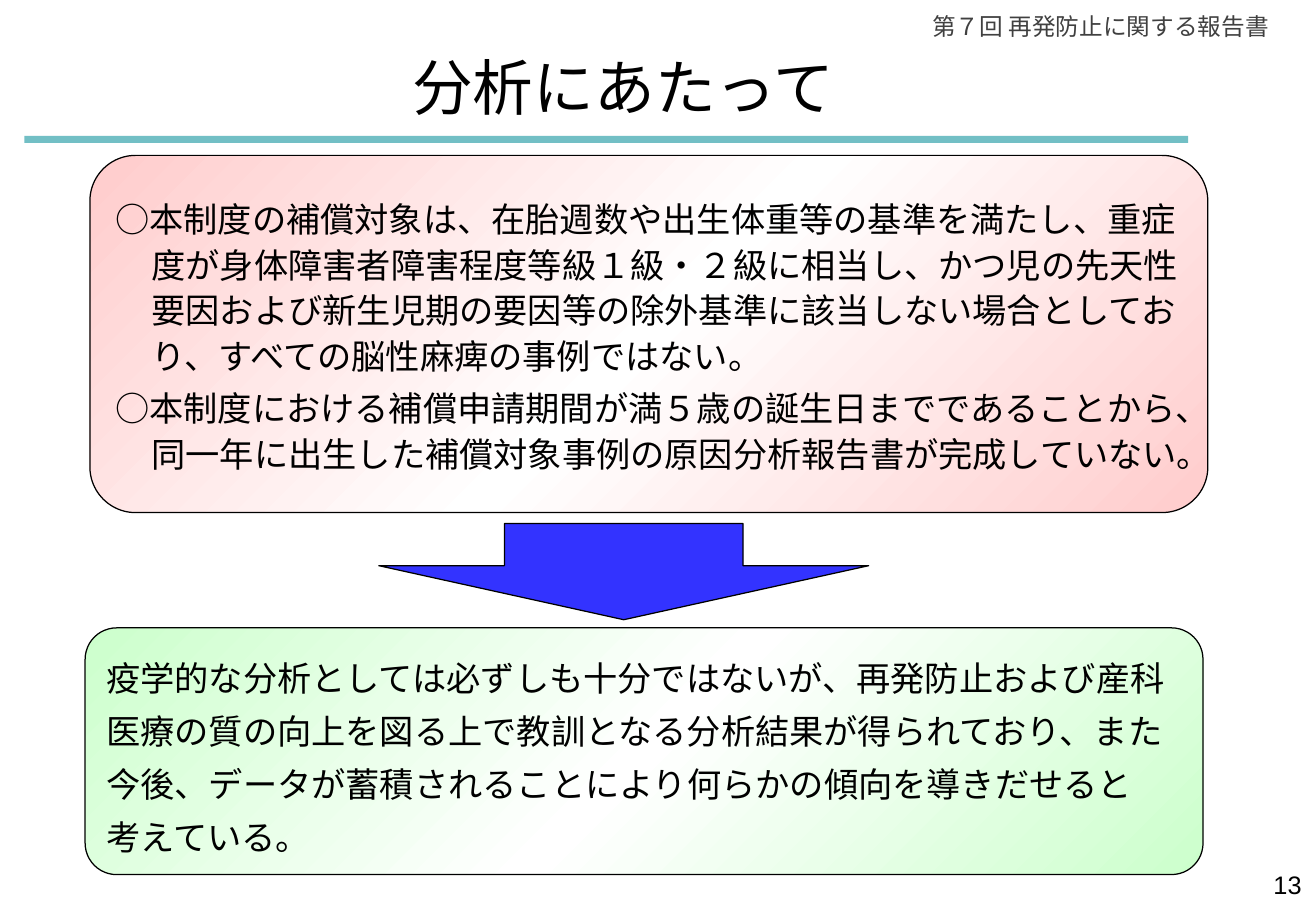
import pptx
import pptx.dml.color
import pptx.enum.shapes
import pptx.enum.text
import pptx.oxml
import pptx.oxml.ns
import pptx.util

Cm, Pt = pptx.util.Cm, pptx.util.Pt
RGB = pptx.dml.color.RGBColor.from_string
SHAPE = pptx.enum.shapes.MSO_SHAPE
ALIGN = pptx.enum.text.PP_ALIGN
ANCHOR = pptx.enum.text.MSO_ANCHOR

COLOURS = {
    "bar": "72BFC5", "header": "404040", "text": "000000", "arrow": "3333FF",
    "pink": "FFCCCC", "green": "CCFFCC", "middle": "FFFFFF",
}
JAPANESE = "Noto Sans CJK JP"


def write(shape, texts, font, wrap=True, anchor=ANCHOR.TOP, **paragraph_format):
    """Fill a shape with paragraphs that share one font and format."""
    frame = shape.text_frame
    frame.word_wrap = wrap
    frame.vertical_anchor = anchor
    for index, text in enumerate(texts):
        paragraph = frame.paragraphs[0] if index == 0 else frame.add_paragraph()
        for name, value in paragraph_format.items():
            setattr(paragraph, name, value)
        if index:
            paragraph.space_before = Pt(4)
        run = paragraph.add_run()
        run.text = text
        name, size, colour = font
        run.font.name = name
        run.font.size = Pt(size)
        run.font.color.rgb = RGB(COLOURS[colour])
        east_asian = pptx.oxml.parse_xml(
            f'<a:ea {pptx.oxml.ns.nsdecls("a")} typeface="{JAPANESE}"/>')
        run.font._element.append(east_asian)


def add_panel(slide, place, colour):
    """Add a rounded box with a diagonal gradient, light in the middle."""
    panel = slide.shapes.add_shape(SHAPE.ROUNDED_RECTANGLE, *map(Cm, place))
    panel.adjustments[0] = 0.128
    panel.shadow.inherit = False
    panel.line.color.rgb = RGB(COLOURS["text"])
    panel.line.width = Pt(0.75)
    stops = "".join(
        f'<a:gs pos="{position}"><a:srgbClr val="{COLOURS[name]}"/></a:gs>'
        for position, name in ((0, colour), (50000, "middle"), (100000, colour)))
    gradient = pptx.oxml.parse_xml(
        f'<a:gradFill {pptx.oxml.ns.nsdecls("a")} rotWithShape="1">'
        f'<a:gsLst>{stops}</a:gsLst><a:lin ang="2700000" scaled="0"/></a:gradFill>')
    geometry = panel._element.spPr.find(pptx.oxml.ns.qn("a:prstGeom"))
    geometry.addnext(gradient)
    return panel


presentation = pptx.Presentation()
presentation.slide_width = Cm(27.51)
presentation.slide_height = Cm(19.05)
slide = presentation.slides.add_slide(presentation.slide_layouts[6])

# Title bar
bar = slide.shapes.add_shape(
    SHAPE.RECTANGLE, Cm(0.51), Cm(2.84), Cm(24.33), Cm(0.15))
bar.shadow.inherit = False
bar.fill.solid()
bar.fill.fore_color.rgb = RGB(COLOURS["bar"])
bar.line.fill.background()

# Header, title and page number
labels = [
    ((18.75, 0.13, 8.03, 0.86), "第７回 再発防止に関する報告書",
     ("Arial", 14, "header"), True, ANCHOR.TOP, ALIGN.RIGHT),
    ((8.28, 0.91, 9.5, 1.8), "分析にあたって",
     (JAPANESE, 36, "text"), False, ANCHOR.MIDDLE, ALIGN.CENTER),
    ((21.03, 18.06, 6.43, 0.9), "13",
     ("Arial", 15, "text"), True, ANCHOR.TOP, ALIGN.RIGHT),
]
for place, text, font, wrap, anchor, alignment in labels:
    label = slide.shapes.add_textbox(*map(Cm, place))
    write(label, [text], font, wrap, anchor, alignment=alignment)

# Limits of the data, then what the analysis still offers
panels = [
    ((1.88, 3.25, 23.37, 7.47), "pink", 27, 0.76, [
        "○本制度の補償対象は、在胎週数や出生体重等の基準を満たし、重症度が身体障害者"
        "障害程度等級１級・２級に相当し、かつ児の先天性要因および新生児期の要因等の"
        "除外基準に該当しない場合としており、すべての脳性麻痺の事例ではない。",
        "○本制度における補償申請期間が満５歳の誕生日までであることから、同一年に出生した"
        "補償対象事例の原因分析報告書が完成していない。",
    ]),
    ((1.78, 13.13, 23.37, 5.16), "green", 31.5, 0, [
        "疫学的な分析としては必ずしも十分ではないが、再発防止および産科医療の質の向上を"
        "図る上で教訓となる分析結果が得られており、また今後、データが蓄積されることにより"
        "何らかの傾向を導きだせると　考えている。",
    ]),
]
for place, colour, line_height, hanging, texts in panels:
    panel = add_panel(slide, place, colour)
    write(panel, texts, (JAPANESE, 20.3, "text"), anchor=ANCHOR.MIDDLE,
          alignment=ALIGN.LEFT, line_spacing=Pt(line_height))
    for paragraph in panel.text_frame.paragraphs:
        properties = paragraph._p.get_or_add_pPr()
        properties.set("marL", str(Cm(hanging)))
        properties.set("indent", str(-Cm(hanging)))

# Arrow between the panels
arrow = slide.shapes.add_shape(
    SHAPE.DOWN_ARROW, Cm(7.92), Cm(10.95), Cm(10.24), Cm(2.01))
arrow.adjustments[0] = 0.487
arrow.adjustments[1] = 0.562
arrow.shadow.inherit = False
arrow.fill.solid()
arrow.fill.fore_color.rgb = RGB(COLOURS["arrow"])
arrow.line.color.rgb = RGB(COLOURS["text"])
arrow.line.width = Pt(0.75)

presentation.save("out.pptx")
